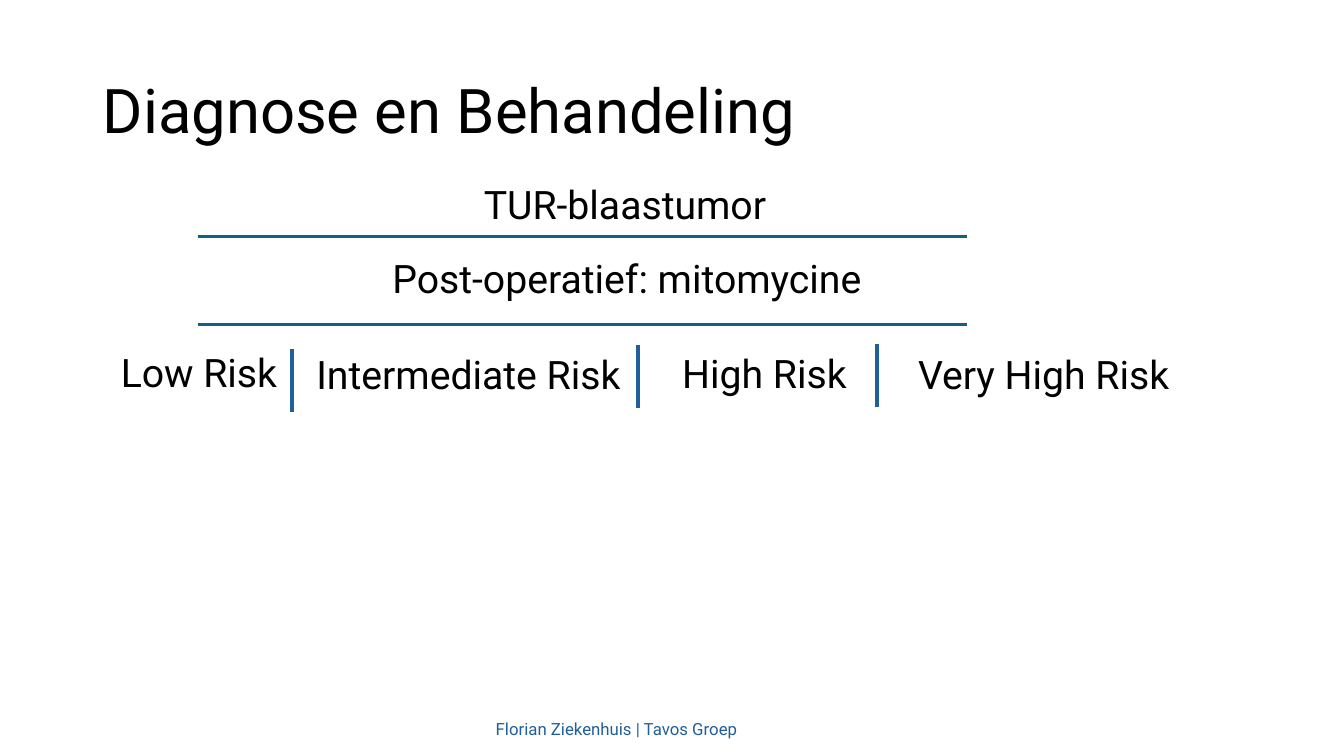
from dataclasses import dataclass

from lxml import etree
from pptx import Presentation
from pptx.dml.color import RGBColor
from pptx.enum.shapes import MSO_CONNECTOR
from pptx.enum.text import MSO_ANCHOR, PP_ALIGN
from pptx.oxml.ns import qn
from pptx.util import Pt

STRAIGHT = MSO_CONNECTOR.STRAIGHT
TOP, MIDDLE = MSO_ANCHOR.TOP, MSO_ANCHOR.MIDDLE
LEFT, CENTER = PP_ALIGN.LEFT, PP_ALIGN.CENTER

TITLE = "Diagnose en Behandeling"
FOOTER = "Florian Ziekenhuis | Tavos Groep"
STEPS = [
    ("TUR-blaastumor", 122.4, 100.8),
    ("Post-operatief: mitomycine", 123.8, 153.4),
]
RISKS = [
    ("Low Risk", 79.2, 249.1, 129.6, TOP),
    ("Intermediate Risk", 218.9, 246.2, 239, MIDDLE),
    ("High Risk", 480.2, 245.5, 140.4, MIDDLE),
    ("Very High Risk", 648.7, 246.2, 213.1, MIDDLE),
]
RULES = [169.2, 231.8]
DIVIDERS = [(208.8, 249.1), (455.8, 246.2), (626.4, 245.5)]
RULE_LEFT, RULE_RIGHT = 141.1, 690.5
DIVIDER_HEIGHT = 45
STEP_WIDTH, STEP_HEIGHT = 648, 90
RISK_HEIGHT = 46.1


@dataclass(frozen=True)
class Theme:
    font: str = "Roboto"
    ink: RGBColor = RGBColor(0, 0, 0)
    rule: RGBColor = RGBColor(0x15, 0x60, 0x82)
    accent: RGBColor = RGBColor(0x21, 0x5F, 0x9A)
    title: int = 44
    body: int = 28
    footer: int = 12


THEME = Theme()


def write(box, text, size, color=THEME.ink, align=LEFT, anchor=MIDDLE,
          spacing=1.0, before=0):
    frame = box.text_frame
    frame.word_wrap = True
    frame.vertical_anchor = anchor
    frame.text = text
    para = frame.paragraphs[0]
    para.alignment = align
    para.line_spacing = spacing
    para.space_before = Pt(before)
    para.font.name = THEME.font
    para.font.size = Pt(size)
    para.font.color.rgb = color


def add_text(slide, left, top, width, height, text, size, **style):
    box = slide.shapes.add_textbox(Pt(left), Pt(top), Pt(width), Pt(height))
    write(box, text, size, **style)


def add_line(slide, left, top, right, bottom, color, weight):
    line = slide.shapes.add_connector(
        STRAIGHT, Pt(left), Pt(top), Pt(right), Pt(bottom))
    line.line.color.rgb = color
    line.line.width = Pt(weight)
    etree.SubElement(line._element.spPr, qn("a:effectLst"))


def main():
    deck = Presentation()
    deck.slide_width, deck.slide_height = Pt(960), Pt(540)
    slide = deck.slides.add_slide(deck.slide_layouts[5])

    title = slide.shapes.title
    title.left, title.top = Pt(66.2), Pt(28.8)
    title.width, title.height = Pt(828), Pt(104.4)
    write(title, TITLE, THEME.title, spacing=0.9)

    for text, left, top in STEPS:
        add_text(slide, left, top, STEP_WIDTH, STEP_HEIGHT, text, THEME.body,
                 align=CENTER)
    for top in RULES:
        add_line(slide, RULE_LEFT, top, RULE_RIGHT, top, THEME.rule, 2.25)
    for text, left, top, width, anchor in RISKS:
        add_text(slide, left, top, width, RISK_HEIGHT, text, THEME.body,
                 anchor=anchor, spacing=0.9, before=10)
    for left, top in DIVIDERS:
        add_line(slide, left, top, left, top + DIVIDER_HEIGHT, THEME.accent, 3)
    add_text(slide, 347, 509.8, 284.4, 21.6, FOOTER, THEME.footer,
             color=THEME.accent, anchor=TOP)

    deck.save("out.pptx")


if __name__ == "__main__":
    main()
